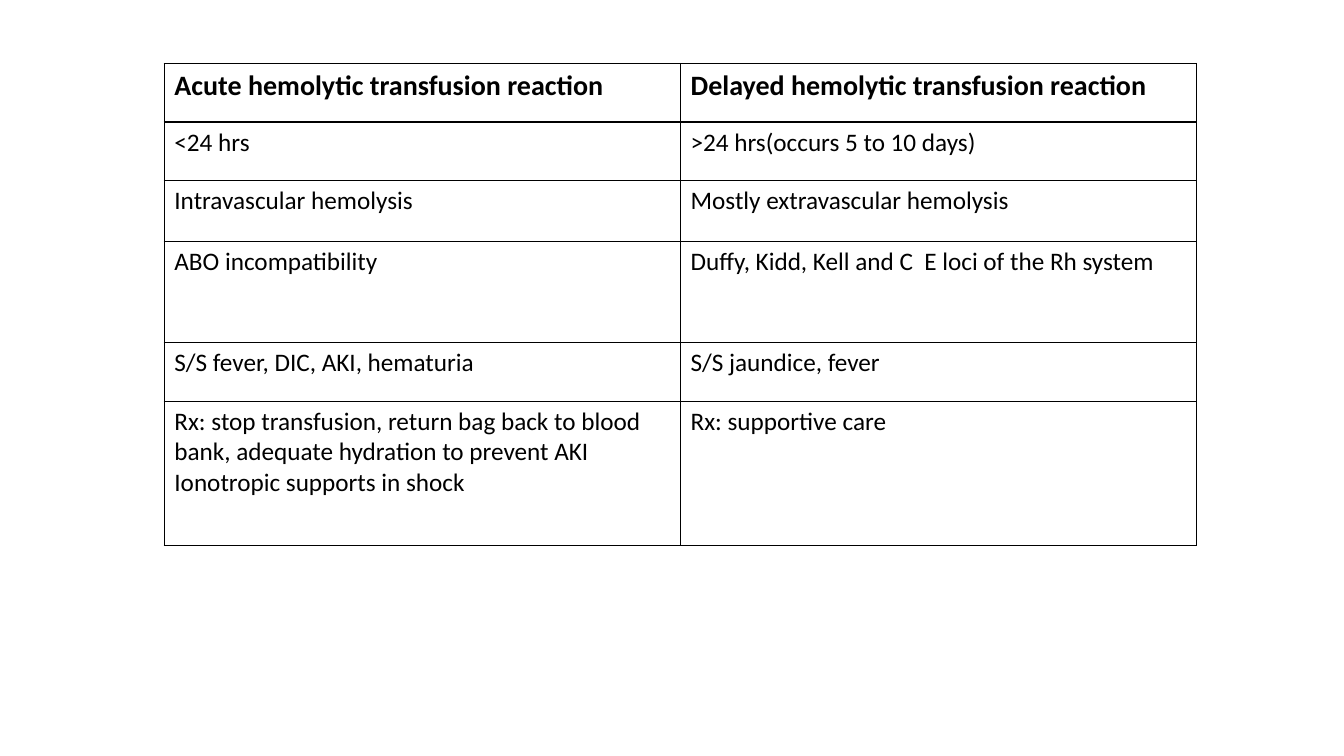
import lxml.etree
import pptx
import pptx.dml.color
import pptx.oxml.ns
import pptx.util

Inches = pptx.util.Inches
Pt = pptx.util.Pt
BLACK = pptx.dml.color.RGBColor(0, 0, 0)

ROWS = [
    (0.58, "Acute hemolytic transfusion reaction", "Delayed hemolytic transfusion reaction"),
    (0.58, "<24 hrs", ">24 hrs(occurs 5 to 10 days)"),
    (0.61, "Intravascular hemolysis", "Mostly extravascular hemolysis"),
    (1, "ABO incompatibility", "Duffy, Kidd, Kell and C  E loci of the Rh system"),
    (0.58, "S/S fever, DIC, AKI, hematuria", "S/S jaundice, fever"),
    (1.43, "Rx: stop transfusion, return bag back to blood bank, "
     "adequate hydration to prevent AKI\nIonotropic supports in shock",
     "Rx: supportive care"),
]


class Deck:
    """Hold the slide and its style, and draw the table."""

    def __init__(self):
        self.file = pptx.Presentation()
        self.file.slide_width = Inches(13.33)
        self.file.slide_height = Inches(7.5)
        self.slide = self.file.slides.add_slide(self.file.slide_layouts[6])
        self.font = "Calibri"
        self.ink = BLACK
        self.line = Pt(1)

    def border(self, cell):
        qn = pptx.oxml.ns.qn
        props = cell._tc.get_or_add_tcPr()
        for spot, side in enumerate(("a:lnL", "a:lnR", "a:lnT", "a:lnB")):
            edge = lxml.etree.Element(qn(side), w=str(self.line))
            fill = lxml.etree.SubElement(edge, qn("a:solidFill"))
            lxml.etree.SubElement(fill, qn("a:srgbClr"), val=str(self.ink))
            props.insert(spot, edge)

    def cell(self, cell, text, size, bold):
        cell.fill.background()
        self.border(cell)
        cell.text = text
        for para in cell.text_frame.paragraphs:
            font = para.font
            font.name = self.font
            font.size = Pt(size)
            font.bold = bold
            font.color.rgb = self.ink

    def table(self, left, top, width, rows):
        high = sum(row[0] for row in rows)
        frame = self.slide.shapes.add_table(
            len(rows), 2, Inches(left), Inches(top), Inches(width), Inches(high))
        table = frame.table
        table.horz_banding = False
        for r, (tall, *texts) in enumerate(rows):
            table.rows[r].height = Inches(tall)
            head = r == 0
            for c, text in enumerate(texts):
                self.cell(table.cell(r, c), text, 20 if head else 18, head)

    def save(self):
        self.file.save("out.pptx")


def main():
    deck = Deck()
    deck.table(1.63, 0.63, 10.24, ROWS)
    deck.save()


if __name__ == "__main__":
    main()
